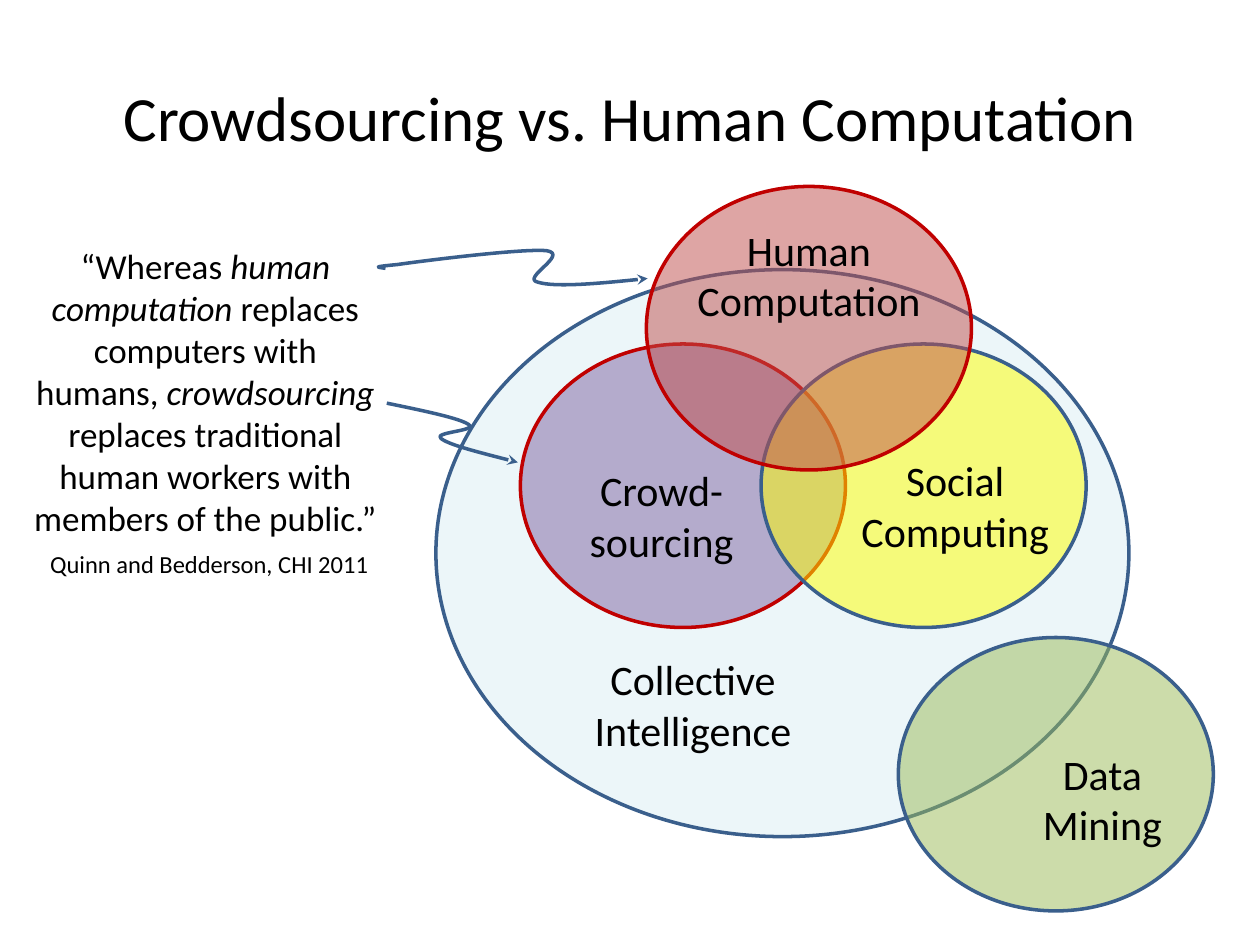
from lxml.etree import SubElement
from pptx import Presentation
from pptx.dml.color import RGBColor
from pptx.enum.shapes import MSO_SHAPE
from pptx.enum.text import MSO_ANCHOR, PP_ALIGN
from pptx.oxml.ns import qn
from pptx.util import Inches, Pt

COLORS = {
    "text": "000000",
    "blue": "3A5F8C",
    "red": "C00000",
    "ice": "DBEEF4",
    "purple": "8064A2",
    "yellow": "FFFF00",
    "rose": "C0504D",
    "green": "9BBB59",
}
FONT = "Calibri"
OPACITY = 51
TITLE = "Crowdsourcing vs. Human Computation"

FIELD_SIZE = (2.58, 2.25)
FIELDS = [
    ((3.46, 2.14), (5.5, 4.5), "ice", "blue"),
    ((4.13, 2.73), FIELD_SIZE, "purple", "red"),
    ((6.04, 2.73), FIELD_SIZE, "yellow", "blue"),
    ((5.13, 1.48), FIELD_SIZE, "rose", "red"),
    ((7.13, 5.06), (2.5, 2.17), "green", "blue"),
]
LABEL_SIZE = (2.08, 0.91)
LABELS = [
    ("Collective Intelligence", (4.46, 5.14)),
    ("Crowd-\vsourcing", (4.21, 3.64)),
    ("Human Computation", (5.38, 1.73)),
    ("Social Computing", (6.54, 3.56)),
    ("Data\vMining", (7.71, 5.89)),
]
QUOTE = [
    ("“Whereas ", False),
    ("human computation", True),
    (" replaces computers with humans, ", False),
    ("crowdsourcing", True),
    (" replaces traditional human workers with members of the public.”", False),
]
CITATION = "Quinn and Bedderson, CHI 2011"
HUMAN_ARROW = [
    (3.06, 2.13),
    (3, 2.12), (2.94, 2.12), (3.15, 2.1),
    (3.36, 2.07), (4.15, 1.97), (4.34, 1.99),
    (4.52, 2.02), (4.13, 2.21), (4.27, 2.24),
    (4.4, 2.28), (4.77, 2.25), (5.14, 2.21),
]
CROWD_ARROW = [
    (3.07, 3.2),
    (3.36, 3.26), (3.65, 3.32), (3.72, 3.37),
    (3.8, 3.42), (3.43, 3.43), (3.5, 3.48),
    (3.56, 3.53), (3.84, 3.6), (4.11, 3.67),
]


def color(name):
    return RGBColor.from_string(COLORS[name])


def set_line(shape, name):
    shape.shadow.inherit = False
    shape.line.color.rgb = color(name)
    shape.line.width = Pt(2)


def set_font(font, size):
    font.name = FONT
    font.size = Pt(size)
    font.color.rgb = color("text")


def add_field(slide, position, size, fill, line):
    field = slide.shapes.add_shape(MSO_SHAPE.OVAL, *map(Inches, position + size))
    set_line(field, line)
    field.fill.solid()
    field.fill.fore_color.rgb = color(fill)
    tint = next(field.fill._xPr.iter(qn("a:srgbClr")))
    SubElement(tint, qn("a:alpha"), val=str(OPACITY * 1000))


def add_text(slide, position, size, points):
    box = slide.shapes.add_textbox(*map(Inches, position + size))
    box.text_frame.word_wrap = True
    paragraph = box.text_frame.paragraphs[0]
    paragraph.alignment = PP_ALIGN.CENTER
    set_font(paragraph.font, points)
    return paragraph


def add_curved_arrow(slide, points):
    start, *controls = [(Inches(x), Inches(y)) for x, y in points]
    builder = slide.shapes.build_freeform(*start)
    builder.add_line_segments(controls, close=False)
    arrow = builder.convert_to_shape()
    set_line(arrow, "blue")
    arrow.fill.background()
    outline = next(arrow._element.iter(qn("a:path")))
    segments = outline.findall(qn("a:lnTo"))
    for first in range(0, len(segments), 3):
        curve = SubElement(outline, qn("a:cubicBezTo"))
        for segment in segments[first:first + 3]:
            curve.append(segment[0])
            outline.remove(segment)
    SubElement(arrow.line._get_or_add_ln(), qn("a:tailEnd"), type="stealth")


def add_quote(slide):
    paragraph = add_text(slide, (0.17, 1.89), (2.92, 3.13), 20)
    for words, italic in QUOTE:
        run = paragraph.add_run()
        run.text = words
        run.font.italic = italic
    paragraph.add_line_break()
    paragraph.add_run().text = " "
    citation = paragraph.add_run()
    citation.text = CITATION
    citation.font.size = Pt(14)


def main():
    presentation = Presentation()
    presentation.slide_width = Inches(10)
    presentation.slide_height = Inches(7.5)
    slide = presentation.slides.add_slide(presentation.slide_layouts[5])

    title = slide.shapes.title
    title.left, title.top, title.width, title.height = map(Inches, (0.5, 0.3, 9, 1.25))
    title.text_frame.text = TITLE
    title.text_frame.vertical_anchor = MSO_ANCHOR.MIDDLE
    heading = title.text_frame.paragraphs[0]
    heading.alignment = PP_ALIGN.CENTER
    set_font(heading.font, 36)

    for field in FIELDS:
        add_field(slide, *field)
    for words, position in LABELS:
        label = add_text(slide, position, LABEL_SIZE, 24)
        label.text = words
    add_curved_arrow(slide, HUMAN_ARROW)
    add_quote(slide)
    add_curved_arrow(slide, CROWD_ARROW)
    presentation.save("out.pptx")


if __name__ == "__main__":
    main()
